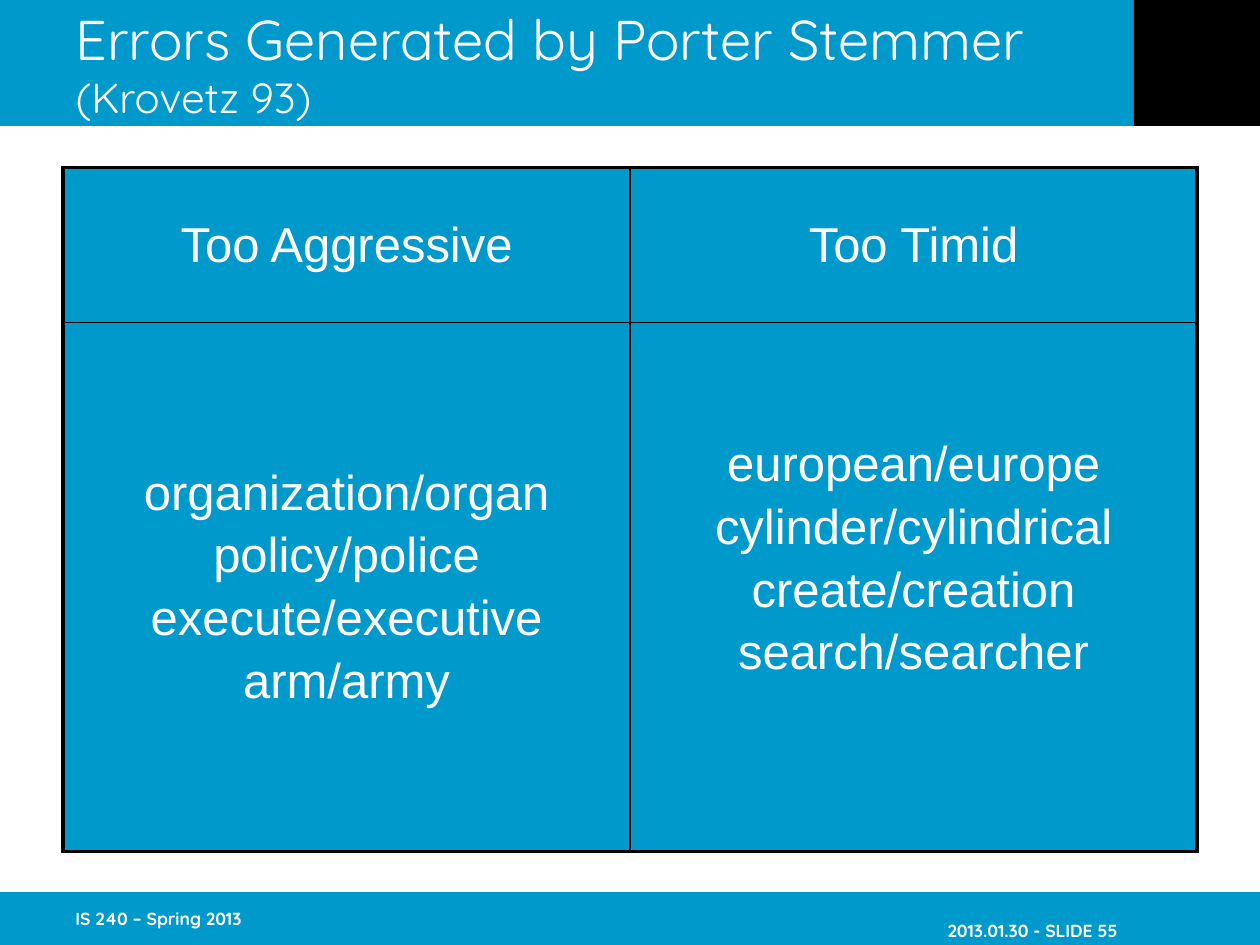
from dataclasses import dataclass

from lxml.etree import SubElement
from pptx import Presentation
from pptx.dml.color import RGBColor
from pptx.enum.shapes import MSO_SHAPE
from pptx.enum.text import MSO_ANCHOR, MSO_AUTO_SIZE, PP_ALIGN
from pptx.oxml.ns import qn
from pptx.util import Inches, Pt


@dataclass(frozen=True)
class Theme:
    """Colours, fonts and type sizes of the slide."""
    blue: str = "0099CC"
    black: str = "000000"
    white: str = "FFFFFF"
    head_font: str = "Quicksand"
    body_font: str = "Arial"
    title: int = 32
    subtitle: int = 24
    body: int = 28
    footer: int = 10
    outer: float = 2.25
    inner: float = 1


def add_run(p, text, font, size, color, bold=False):
    """Add a formatted run to a paragraph."""
    r = p.add_run()
    r.text = text
    r.font.name, r.font.size, r.font.bold = font, Pt(size), bold
    r.font.color.rgb = RGBColor.from_string(color)


def set_border(cell, side, width, color):
    """Draw one side of a cell; call in the order L, R, T, B before the fill."""
    ln = SubElement(cell._tc.get_or_add_tcPr(), qn(f"a:ln{side}"), w=str(Pt(width)))
    SubElement(SubElement(ln, qn("a:solidFill")), qn("a:srgbClr"), val=color)


class SlideBuilder:
    """Hold the theme and the current slide."""

    def __init__(self, prs, theme):
        """Start a title-only slide."""
        self.theme = theme
        self.s = prs.slides.add_slide(prs.slide_layouts[5])

    def bar(self, x, y, w, h, color):
        """Add a plain filled rectangle."""
        sp = self.s.shapes.add_shape(MSO_SHAPE.RECTANGLE, Inches(x), Inches(y), Inches(w), Inches(h))
        sp.shadow.inherit = False
        sp.fill.solid()
        sp.fill.fore_color.rgb = RGBColor.from_string(color)
        sp.line.fill.background()

    def title(self, text, subtitle):
        """Fill the title placeholder and bring it in front of the bars."""
        t = self.theme
        sp = self.s.shapes.title
        sp.left, sp.top, sp.width, sp.height = Inches(0.5), Inches(0), Inches(8.5), Inches(1)
        self.s.shapes._spTree.append(sp._element)
        tf = sp.text_frame
        tf.word_wrap, tf.auto_size = True, MSO_AUTO_SIZE.NONE
        tf.vertical_anchor = MSO_ANCHOR.MIDDLE
        p = tf.paragraphs[0]
        p.alignment = PP_ALIGN.LEFT
        add_run(p, text + " ", t.head_font, t.title, t.white)
        add_run(p, subtitle, t.head_font, t.subtitle, t.white)

    def footer(self, text, x, align=PP_ALIGN.LEFT, anchor=MSO_ANCHOR.MIDDLE, right=0, bottom=0.05):
        """Add a bold label in the bottom bar."""
        t = self.theme
        sp = self.s.shapes.add_textbox(Inches(x), Inches(7.08), Inches(2.08), Inches(0.42))
        tf = sp.text_frame
        tf.word_wrap, tf.vertical_anchor = True, anchor
        tf.margin_right, tf.margin_bottom = Inches(right), Inches(bottom)
        p = tf.paragraphs[0]
        p.alignment = align
        add_run(p, text, t.head_font, t.footer, t.white, bold=True)

    def table(self, rows, x, y, widths, heights):
        """Add a table whose cells are lists of lines."""
        sp = self.s.shapes.add_table(len(rows), len(widths), Inches(x), Inches(y),
                                     Inches(sum(widths)), Inches(sum(heights)))
        tbl = sp.table
        for col, w in zip(tbl.columns, widths):
            col.width = Inches(w)
        for row, h in zip(tbl.rows, heights):
            row.height = Inches(h)
        for i, row in enumerate(rows):
            for j, lines in enumerate(row):
                edges = {"L": j == 0, "R": j == len(widths) - 1,
                         "T": i == 0, "B": i == len(rows) - 1}
                self.cell(tbl.cell(i, j), lines, edges)
        return tbl

    def cell(self, cell, lines, edges):
        """Format one table cell and write its lines."""
        t = self.theme
        for side, is_outer in edges.items():
            set_border(cell, side, t.outer if is_outer else t.inner, t.black)
        cell.fill.solid()
        cell.fill.fore_color.rgb = RGBColor.from_string(t.blue)
        cell.vertical_anchor = MSO_ANCHOR.MIDDLE
        tf = cell.text_frame
        for k, line in enumerate(lines):
            p = tf.add_paragraph() if k else tf.paragraphs[0]
            p.alignment = PP_ALIGN.CENTER
            if k:
                p.space_before = Pt(4.6)
            add_run(p, line, t.body_font, t.body, t.white)


def main():
    """Build the slide and save it."""
    prs = Presentation()
    prs.slide_width, prs.slide_height = Inches(10), Inches(7.5)
    theme = Theme()
    b = SlideBuilder(prs, theme)
    b.bar(0, 0, 10, 1, theme.blue)
    b.bar(0, 7.08, 10, 0.42, theme.blue)
    b.bar(9, 0, 1, 1, theme.black)
    b.footer("2013.01.30 - SLIDE 55", 7.42, PP_ALIGN.RIGHT, MSO_ANCHOR.BOTTOM, right=0.63, bottom=0.03)
    b.footer("IS 240 – Spring 2013", 0.5)
    rows = [
        [["Too Aggressive"], ["Too Timid"]],
        [["organization/organ", "policy/police", "execute/executive", "arm/army"],
         ["european/europe", "cylinder/cylindrical", "create/creation", "search/searcher"]],
    ]
    tbl = b.table(rows, 0.5, 1.33, [4.5, 4.5], [1.23, 4.2])
    tbl.cell(1, 1).margin_bottom = Inches(0.5)
    b.title("Errors Generated by Porter Stemmer", "(Krovetz 93)")
    prs.save("out.pptx")


if __name__ == "__main__":
    main()
